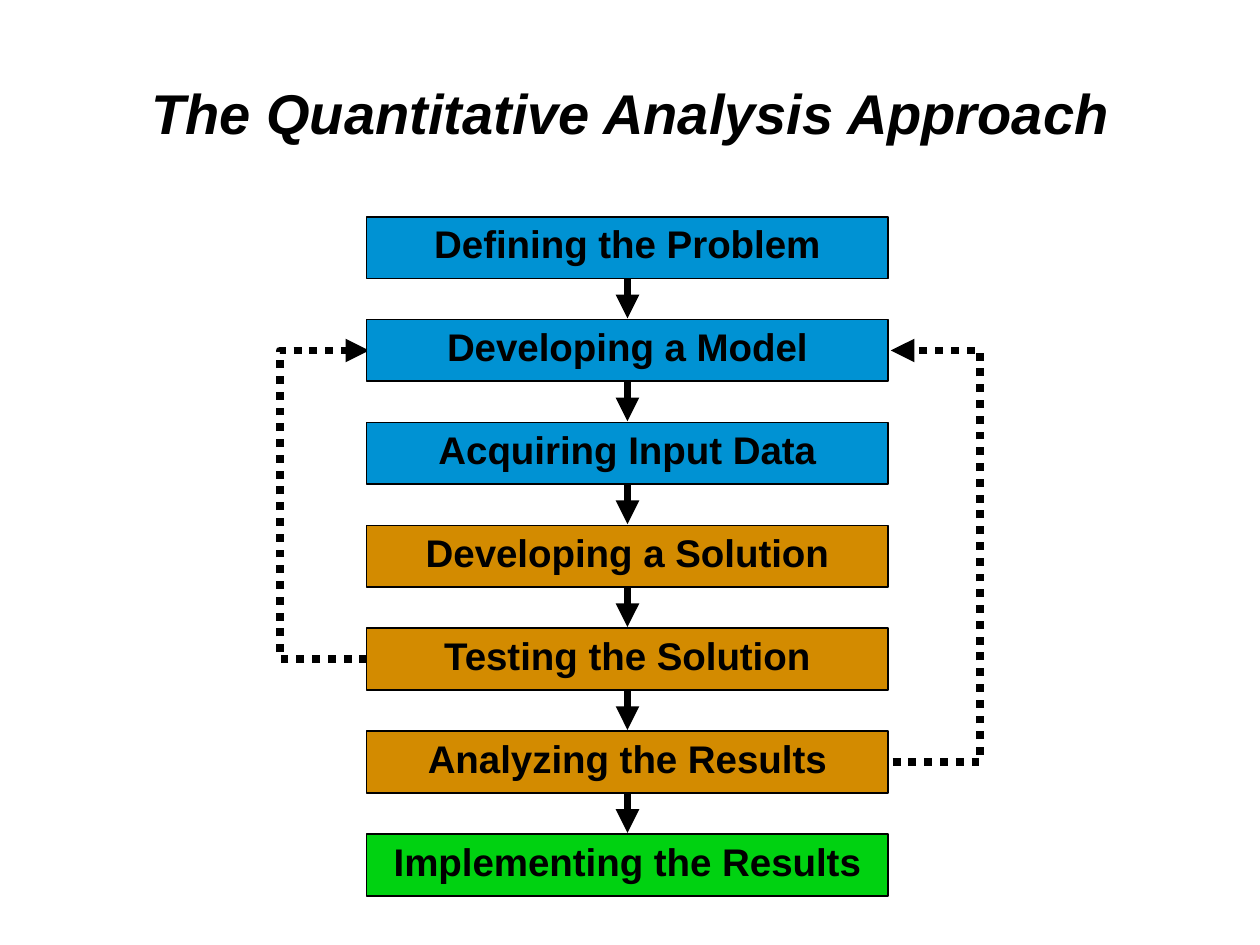
from lxml import etree
from pptx import Presentation, util as u
from pptx.dml.color import RGBColor
from pptx.enum import dml, shapes, text
from pptx.oxml.ns import qn

COLORS = {"ink": "000000", "define": "0092D3", "solve": "D38B00", "apply": "00D211"}
FONT = "Arial"
TITLE = "The Quantitative Analysis Approach"
STEPS = [
    ("Defining the Problem", "define"),
    ("Developing a Model", "define"),
    ("Acquiring Input Data", "define"),
    ("Developing a Solution", "solve"),
    ("Testing the Solution", "solve"),
    ("Analyzing the Results", "solve"),
    ("Implementing the Results", "apply"),
]
# Feedback loops: from step, to step, start x, outer x, arrow tip x
LOOPS = [(5, 1, 6.96, 7.78, 7.07), (4, 1, 3.04, 2.22, 2.93)]

# Inches
BOX_LEFT, BOX_TOP, BOX_WIDTH, BOX_HEIGHT = 2.91, 1.72, 4.14, 0.49
LAST_TOP = 6.62
PITCH = (LAST_TOP - BOX_TOP) / (len(STEPS) - 1)
CENTER = BOX_LEFT + BOX_WIDTH / 2


def color(name):
    return RGBColor.from_string(COLORS[name])


def step_top(index):
    return BOX_TOP + index * PITCH


def step_middle(index):
    return step_top(index) + BOX_HEIGHT / 2


def write(frame, wording, size, spacing, italic=False):
    frame.text = wording
    frame.vertical_anchor = text.MSO_ANCHOR.MIDDLE
    paragraph = frame.paragraphs[0]
    paragraph.alignment = text.PP_ALIGN.CENTER
    paragraph.line_spacing = spacing
    font = paragraph.runs[0].font
    font.name, font.size = FONT, u.Pt(size)
    font.bold, font.italic = True, italic
    font.color.rgb = color("ink")


def draw_arrow(arrow, dash=None):
    arrow.line.color.rgb = color("ink")
    arrow.line.width = u.Pt(4.5)
    if dash:
        arrow.line.dash_style = dash
    properties = arrow.element.spPr
    etree.SubElement(properties.get_or_add_ln(), qn("a:tailEnd"), type="triangle")
    if properties.find(qn("a:effectLst")) is None:
        etree.SubElement(properties, qn("a:effectLst"))


prs = Presentation()
prs.slide_width, prs.slide_height = u.Inches(10), u.Inches(7.5)
slide = prs.slides.add_slide(prs.slide_layouts[5])

# Title
title = slide.shapes.title
title.left, title.top = u.Inches(0.83), u.Inches(0.6)
title.width, title.height = u.Inches(8.35), u.Inches(0.65)
write(title.text_frame, TITLE, 32, 0.9, italic=True)

# Dotted feedback loops
for source, target, start_x, outer_x, tip_x in LOOPS:
    start_y, end_y = step_middle(source), step_middle(target)
    builder = slide.shapes.build_freeform(u.Inches(start_x), u.Inches(start_y))
    corners = [(outer_x, start_y), (outer_x, end_y), (tip_x, end_y)]
    builder.add_line_segments(
        [(u.Inches(x), u.Inches(y)) for x, y in corners], close=False)
    loop = builder.convert_to_shape()
    loop.fill.background()
    loop.shadow.inherit = False
    draw_arrow(loop, dml.MSO_LINE.ROUND_DOT)

# Arrows between steps, starting behind the upper box
for index in range(len(STEPS) - 1):
    draw_arrow(slide.shapes.add_connector(
        shapes.MSO_CONNECTOR.STRAIGHT,
        u.Inches(CENTER), u.Inches(step_top(index) + BOX_HEIGHT - 0.1),
        u.Inches(CENTER), u.Inches(step_top(index + 1) - 0.01)))

# Step boxes
for index, (wording, phase) in enumerate(STEPS):
    box = slide.shapes.add_shape(
        shapes.MSO_SHAPE.RECTANGLE, u.Inches(BOX_LEFT), u.Inches(step_top(index)),
        u.Inches(BOX_WIDTH), u.Inches(BOX_HEIGHT))
    box.shadow.inherit = False
    box.fill.solid()
    box.fill.fore_color.rgb = color(phase)
    box.line.color.rgb = color("ink")
    box.line.width = u.Pt(1)
    box.text_frame.word_wrap = False
    write(box.text_frame, wording, 22, 0.8)

prs.save("out.pptx")
